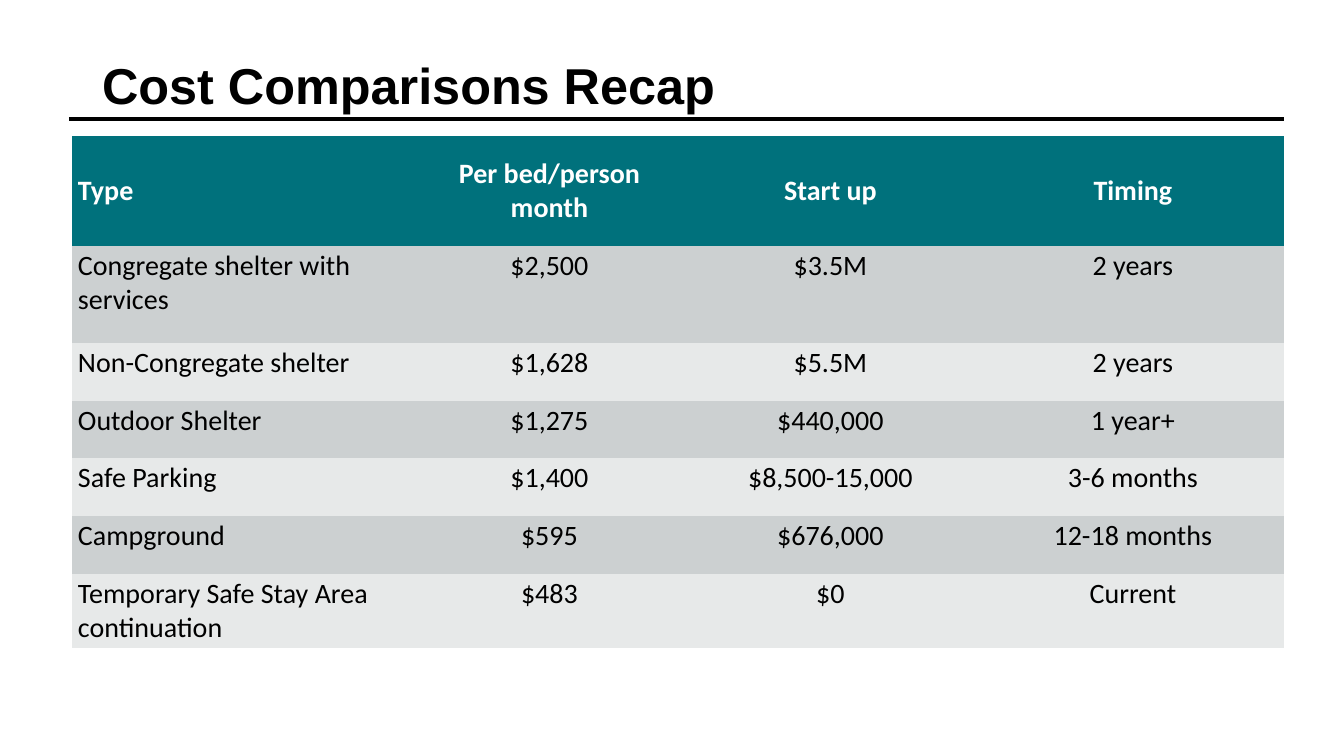
from dataclasses import dataclass

from lxml.etree import SubElement
from pptx import Presentation
from pptx.dml.color import RGBColor
from pptx.enum.shapes import MSO_CONNECTOR
from pptx.enum.text import MSO_ANCHOR, MSO_AUTO_SIZE, PP_ALIGN
from pptx.oxml.ns import qn
from pptx.util import Inches, Pt

PX_PER_INCH = 100.8
NO_GRID_STYLE = "{2D5ABB26-0587-4C30-8999-92F81FD0307C}"


@dataclass(frozen=True)
class Theme:
    ink: RGBColor = RGBColor.from_string("000000")
    header_ink: RGBColor = RGBColor.from_string("FFFFFF")
    header_fill: RGBColor = RGBColor.from_string("00717C")
    dark_band: RGBColor = RGBColor.from_string("CCD0D1")
    light_band: RGBColor = RGBColor.from_string("E7E9E9")
    title_font: str = "Arial"
    table_font: str = "Calibri"
    title_size: int = 36
    table_size: int = 20
    rule_width: int = 3


THEME = Theme()

COST_ROWS = [
    ("Type", "Per bed/person month", "Start up", "Timing"),
    ("Congregate shelter with services", "$2,500", "$3.5M", "2 years"),
    ("Non-Congregate shelter", "$1,628", "$5.5M", "2 years"),
    ("Outdoor Shelter", "$1,275", "$440,000", "1 year+"),
    ("Safe Parking", "$1,400", "$8,500-15,000", "3-6 months"),
    ("Campground", "$595", "$676,000", "12-18 months"),
    ("Temporary Safe Stay Area continuation", "$483", "$0", "Current"),
]
COLUMN_WIDTHS = [348, 259, 303, 302]
ROW_HEIGHTS = [110, 97, 58, 57, 58, 58, 74]


def px(length):
    return Inches(length / PX_PER_INCH)


def style_font(font, name, size, color, bold):
    font.name = name
    font.size = Pt(size)
    font.color.rgb = color
    font.bold = bold


def set_title(page, text, left, top, width, height):
    title = page.shapes.title
    title.left, title.top, title.width, title.height = map(px, (left, top, width, height))
    frame = title.text_frame
    frame.text = text
    frame.auto_size = MSO_AUTO_SIZE.NONE
    frame.vertical_anchor = MSO_ANCHOR.BOTTOM
    para = frame.paragraphs[0]
    para.alignment = PP_ALIGN.LEFT
    para.line_spacing = 0.9
    style_font(para.font, THEME.title_font, THEME.title_size, THEME.ink, True)


def add_rule(page, left, right, y):
    rule = page.shapes.add_connector(
        MSO_CONNECTOR.STRAIGHT, px(left), px(y), px(right), px(y))
    rule.line.color.rgb = THEME.ink
    rule.line.width = Pt(THEME.rule_width)
    SubElement(rule._element.spPr, qn("a:effectLst"))


def fill_cell(cell, text, is_header, fill, alignment):
    cell.text = text
    cell.margin_left = cell.margin_right = px(6)
    cell.margin_top = cell.margin_bottom = px(3)
    cell.vertical_anchor = MSO_ANCHOR.MIDDLE if is_header else MSO_ANCHOR.TOP
    cell.fill.solid()
    cell.fill.fore_color.rgb = fill
    para = cell.text_frame.paragraphs[0]
    para.alignment = alignment
    color = THEME.header_ink if is_header else THEME.ink
    style_font(para.font, THEME.table_font, THEME.table_size, color, is_header)


def add_cost_table(page, left, top):
    table = page.shapes.add_table(
        len(ROW_HEIGHTS), len(COLUMN_WIDTHS), px(left), px(top),
        px(sum(COLUMN_WIDTHS)), px(sum(ROW_HEIGHTS))).table
    table._tbl.tblPr.find(qn("a:tableStyleId")).text = NO_GRID_STYLE
    table.horz_banding = False
    for column, width in zip(table.columns, COLUMN_WIDTHS):
        column.width = px(width)
    bands = (THEME.light_band, THEME.dark_band)
    for row_index, values in enumerate(COST_ROWS):
        table.rows[row_index].height = px(ROW_HEIGHTS[row_index])
        is_header = row_index == 0
        fill = THEME.header_fill if is_header else bands[row_index % 2]
        for column_index, value in enumerate(values):
            alignment = PP_ALIGN.CENTER if column_index else PP_ALIGN.LEFT
            fill_cell(table.cell(row_index, column_index), value, is_header, fill, alignment)


def main():
    deck = Presentation()
    deck.slide_width, deck.slide_height = px(1344), px(756)
    page = deck.slides.add_slide(deck.slide_layouts.get_by_name("Title Only"))
    add_rule(page, 69, 1284, 119)
    add_cost_table(page, 72, 136)
    set_title(page, "Cost Comparisons Recap", 92, 54, 1159, 66)
    deck.save("out.pptx")


if __name__ == "__main__":
    main()
